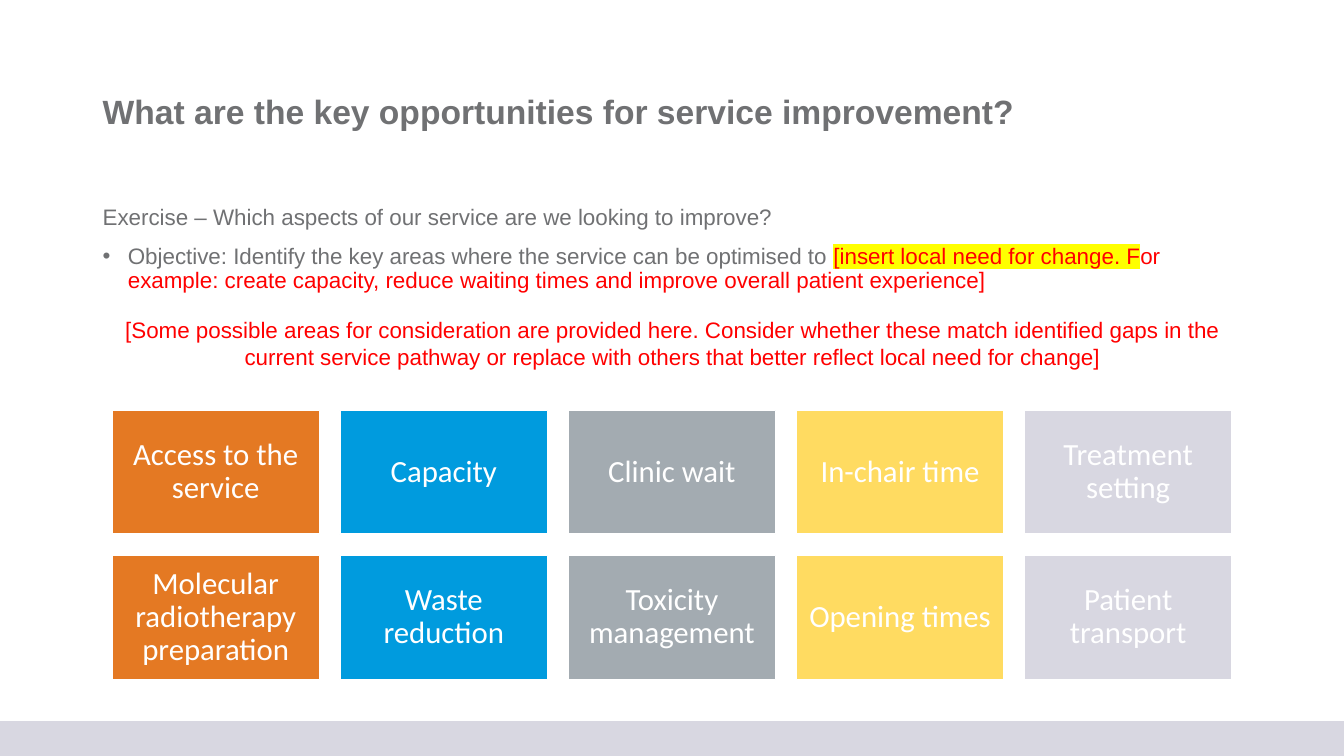
from lxml.etree import SubElement
from pptx import Presentation
from pptx.dml.color import RGBColor
from pptx.enum.shapes import MSO_SHAPE
from pptx.enum.text import MSO_ANCHOR, PP_ALIGN
from pptx.oxml import parse_xml
from pptx.oxml.ns import nsdecls, qn
from pptx.util import Inches, Pt

COLORS = {
    "text": "707173", "prompt": "FF0000", "highlight": "FFFF00", "white": "FFFFFF",
    "orange": "E47923", "blue": "009BDE", "gray": "A3ABB1", "yellow": "FFDB61",
    "lavender": "D8D7E1",
}


def write(para, text, color="text", size=16, font="Arial", bold=False, highlight=None):
    """Add one formatted run to a paragraph."""
    span = para.add_run()
    span.text = text
    span.font.size = Pt(size)
    span.font.bold = bold
    span.font.color.rgb = RGBColor.from_string(COLORS[color])
    span.font.name = font
    if highlight:
        mark = parse_xml(f'<a:highlight {nsdecls("a")}><a:srgbClr val="{COLORS[highlight]}"/></a:highlight>')
        span.font.fill  # the highlight has to follow the fill
        span._r.rPr.find(qn("a:solidFill")).addnext(mark)


def add_rectangle(left, top, width, height, fill, line):
    box = slide.shapes.add_shape(
        MSO_SHAPE.RECTANGLE, Inches(left), Inches(top), Inches(width), Inches(height))
    box.shadow.inherit = False
    box.fill.solid()
    box.fill.fore_color.rgb = RGBColor.from_string(COLORS[fill])
    box.line.color.rgb = RGBColor.from_string(COLORS[line])
    box.line.width = Pt(1)
    return box


deck = Presentation()
deck.slide_width, deck.slide_height = Inches(13.33), Inches(7.5)
slide = deck.slides.add_slide(deck.slide_layouts[6])

add_rectangle(0, 7.16, 13.33, 0.34, "lavender", "lavender")

# Text areas share the same left edge and width
frames = []
for top, height in [(0.4, 1.45), (2, 1.05), (3.09, 0.64)]:
    box = slide.shapes.add_textbox(Inches(0.92), Inches(top), Inches(11.5), Inches(height))
    box.text_frame.word_wrap = True
    frames.append(box.text_frame)
title, body, hint = frames

title.vertical_anchor = MSO_ANCHOR.MIDDLE
title.paragraphs[0].line_spacing = 0.9
write(title.paragraphs[0], "What are the key opportunities for service improvement?", size=24, bold=True)

exercise, objective = body.paragraphs[0], body.add_paragraph()
for para in (exercise, objective):
    para.line_spacing = 0.9
    para.space_before = Pt(10)
write(exercise, "Exercise – Which aspects of our service are we looking to improve?")

properties = objective._p.get_or_add_pPr()
properties.set("marL", str(Inches(0.25)))
properties.set("indent", str(-Inches(0.25)))
SubElement(properties, qn("a:buFont")).set("typeface", "Arial")
SubElement(properties, qn("a:buChar")).set("char", "•")
write(objective, "Objective: Identify the key areas where the service can be optimised to ")
write(objective, "[insert local need for change. F", color="prompt", highlight="highlight")
write(objective, "or example: create capacity, reduce waiting times and improve overall patient experience]",
      color="prompt")

hint.paragraphs[0].alignment = PP_ALIGN.CENTER
write(hint.paragraphs[0],
      "[Some possible areas for consideration are provided here. Consider whether these match "
      "identified gaps in the current service pathway or replace with others that better reflect "
      "local need for change]", color="prompt")

# Grid of areas: one colour per column
AREAS = [
    ["Access to the service", "Capacity", "Clinic wait", "In-chair time", "Treatment setting"],
    ["Molecular radiotherapy preparation", "Waste reduction", "Toxicity management",
     "Opening times", "Patient transport"],
]
COLUMN_FILLS = ["orange", "blue", "gray", "yellow", "lavender"]
for row, labels in enumerate(AREAS):
    for column, (label, fill) in enumerate(zip(labels, COLUMN_FILLS)):
        box = add_rectangle(1.11 + 2.2625 * column, 4.07 + 1.44 * row, 2.06, 1.23, fill, "white")
        frame = box.text_frame
        frame.word_wrap = True
        frame.vertical_anchor = MSO_ANCHOR.MIDDLE
        frame.margin_left = frame.margin_right = Inches(0.09)
        frame.margin_top = frame.margin_bottom = Inches(0.09)
        para = frame.paragraphs[0]
        para.alignment = PP_ALIGN.CENTER
        para.line_spacing = 0.9
        write(para, label, color="white", size=22, font="Calibri")

deck.save("out.pptx")
